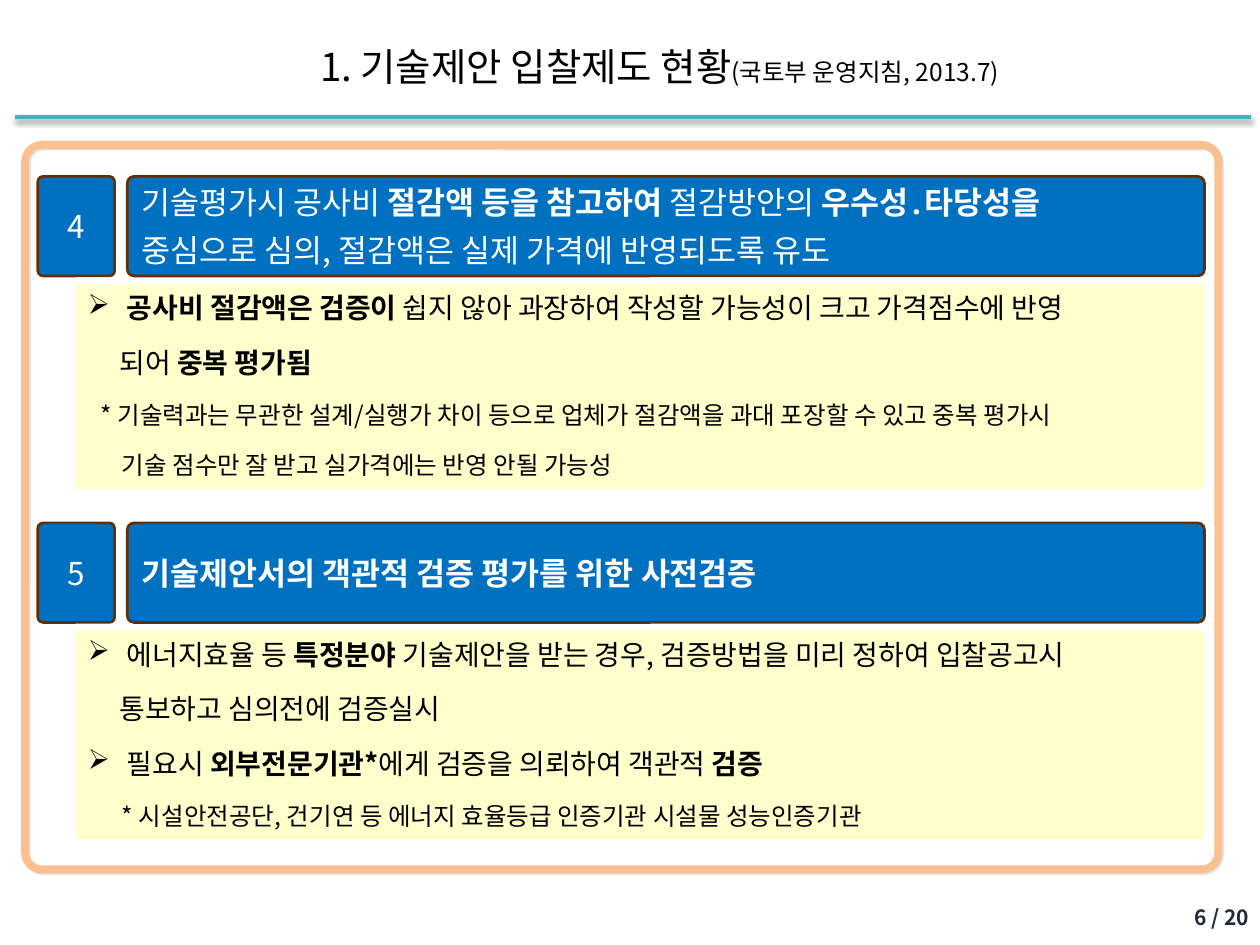
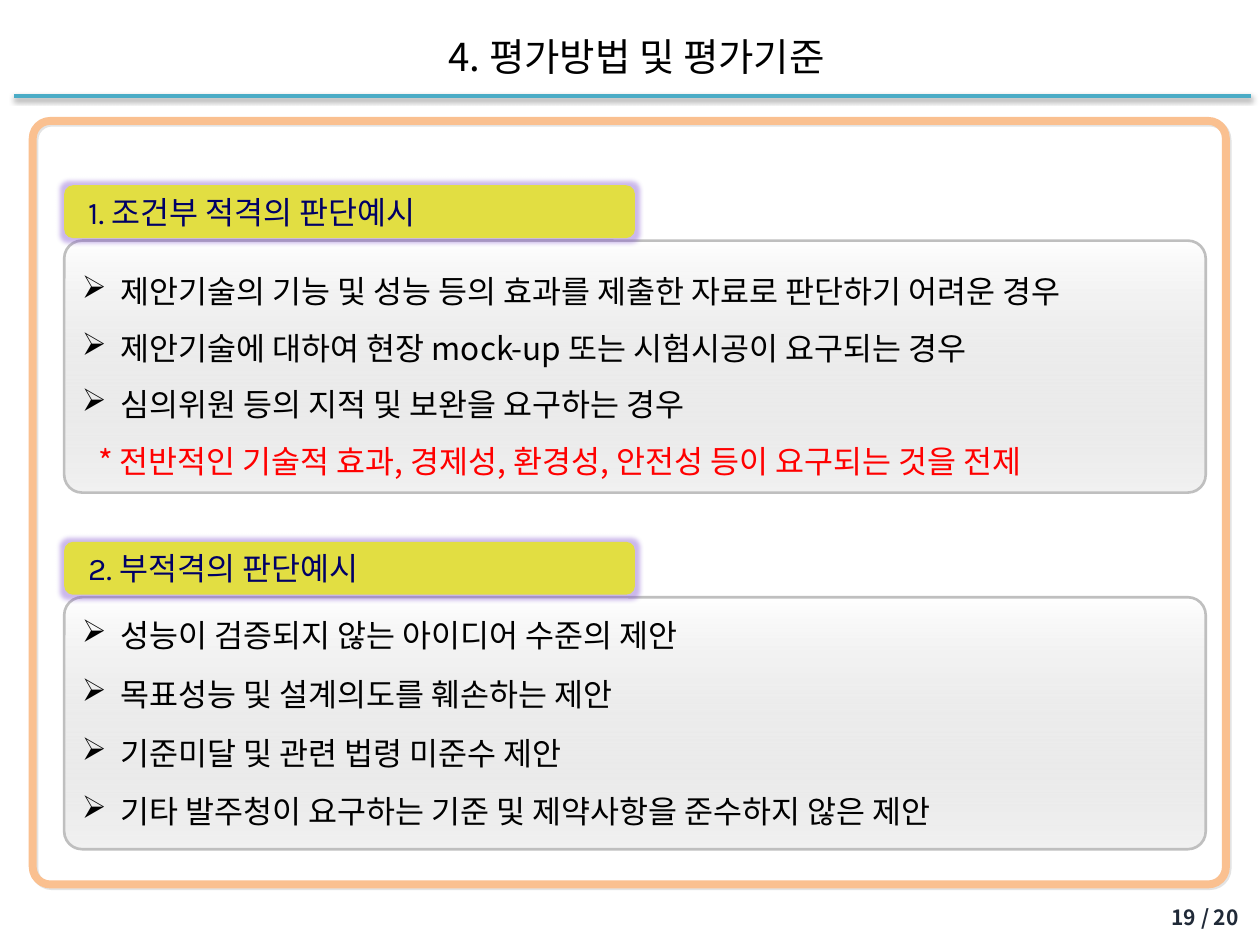
from lxml.etree import SubElement
from pptx import Presentation
from pptx.dml.color import RGBColor
from pptx.enum.shapes import MSO_CONNECTOR, MSO_SHAPE
from pptx.enum.text import MSO_ANCHOR, MSO_AUTO_SIZE, PP_ALIGN
from pptx.oxml.ns import qn
from pptx.util import Inches, Pt

# ---- Content: |...| marks emphasis ----
EVALUATION = {
    "title": "1. 기술제안 입찰제도 현황|(국토부 운영지침, 2013.7)|",
    "title_box": (2.44, 0.29, 6.5, 0.47),
    "rule": (0.12, 0.93, 9.93),
    "frame": (0.2, 1.15, 9.47, 5.75),
    "page": ("6 / 20", 9.1),
}
EVALUATION_TOPICS = [
    {"number": "4", "top": 1.4, "detail_height": 1.62,
     "heading": [("기술평가시 공사비 |절감액 등을 참고하여 |절감방안의 |우수성․타당성을|", "plain"),
                 ("중심으로 심의, 절감액은 실제 가격에 반영되도록 유도", "plain")],
     "details": [("|공사비 절감액은 검증이 |쉽지 않아 과장하여 작성할 가능성이 크고 가격점수에 반영", "bullet"),
                 ("되어 |중복 평가됨|", "continued"),
                 ("* 기술력과는 무관한 설계/실행가 차이 등으로 업체가 절감액을 과대 포장할 수 있고 중복 평가시", "note"),
                 ("기술 점수만 잘 받고 실가격에는 반영 안될 가능성", "deep note")]},
    {"number": "5", "top": 4.15, "detail_height": 1.65,
     "heading": [("|기술제안서의 객관적 검증 평가를 위한 사전검증|", "plain")],
     "details": [("에너지효율 등 |특정분야| 기술제안을 받는 경우, 검증방법을 미리 정하여 입찰공고시", "bullet"),
                 ("통보하고 심의전에 검증실시", "continued"),
                 ("필요시 |외부전문기관*|에게 검증을 의뢰하여 객관적 |검증|", "bullet"),
                 ("* 시설안전공단, 건기연 등 에너지 효율등급 인증기관 시설물 성능인증기관", "deep note")]},
]
CRITERIA = {
    "title": "4. 평가방법 및 평가기준",
    "title_box": (3.46, 0.21, 3.74, 0.47),
    "rule": (0.11, 0.76, 9.93),
    "frame": (0.26, 0.96, 9.47, 6.06),
    "page": ("19 / 20", 9.02),
}
CRITERIA_EXAMPLES = [
    {"heading": "1. 조건부 적격의 판단예시", "top": 1.47, "leading": 1.8, "before": 0,
     "cases": [("제안기술의 기능 및 성능 등의 효과를 제출한 자료로 판단하기 어려운 경우", "bullet"),
               ("제안기술에 대하여 현장 mock-up 또는 시험시공이 요구되는 경우", "bullet"),
               ("심의위원 등의 지적 및 보완을 요구하는 경우", "bullet"),
               ("* 전반적인 기술적 효과, 경제성, 환경성, 안전성 등이 요구되는 것을 전제", "warning")]},
    {"heading": "2. 부적격의 판단예시", "top": 4.3, "leading": 1.2, "before": 12,
     "cases": [("성능이 검증되지 않는 아이디어 수준의 제안", "bullet"),
               ("목표성능 및 설계의도를 훼손하는 제안", "bullet"),
               ("기준미달 및 관련 법령 미준수 제안", "bullet"),
               ("기타 발주청이 요구하는 기준 및 제약사항을 준수하지 않은 제안", "bullet")]},
]

# ---- Shared look ----
COLORS = {
    "black": "000000", "white": "FFFFFF", "rule": "4BACC6", "page": "202A38",
    "frame": "FAC090", "frame shadow": "DDDDDD", "bar": "0070C0", "bar line": "652E01",
    "detail": "FFFFCC", "panel line": "BFBFBF", "tab": "E2DE42", "tab text": "000066",
    "glow": "7F4FCF", "warning": "FF0000",
}
PANEL_STOPS = [(0, "FFFFFF", 100), (54, "D9D9D9", 50), (100, "F2F2F2", 100)]
FONT = "Noto Sans CJK KR"
# Paragraph kinds: left margin, first-line indent, and format overrides
KINDS = {
    "plain": {"margin": 0},
    "bullet": {"margin": 0.31, "hang": -0.31, "bullet": "➢"},
    "continued": {"margin": 0.25},
    "note": {"margin": 0.1, "size": 14},
    "deep note": {"margin": 0.27, "size": 14},
    "warning": {"margin": 0.13, "color": "warning"},
    "tab": {"margin": 0.06},
}


def rgb(name):
    return RGBColor.from_string(COLORS[name])


def write_text(shape, paragraphs, size=18, color="black", font=FONT, bold=False,
               accent_size=None, align=PP_ALIGN.LEFT, anchor=MSO_ANCHOR.MIDDLE,
               before=0, leading=1.2, insets=(0.1, 0.05)):
    """Write (text, kind) paragraphs; accents are bold, or resized by accent_size."""
    frame = shape.text_frame
    frame.word_wrap = True
    frame.auto_size = MSO_AUTO_SIZE.NONE
    frame.vertical_anchor = anchor
    frame.margin_left = frame.margin_right = Inches(insets[0])
    frame.margin_top = frame.margin_bottom = Inches(insets[1])
    for index, (text, kind) in enumerate(paragraphs):
        style = KINDS[kind]
        text_size = style.get("size", size)
        paragraph = frame.add_paragraph() if index else frame.paragraphs[0]
        properties = paragraph._p.get_or_add_pPr()
        properties.set("marL", str(Inches(style["margin"])))
        properties.set("indent", str(Inches(style.get("hang", 0))))
        if "bullet" in style:
            SubElement(properties, qn("a:buChar"), char=style["bullet"])
        paragraph.alignment = align
        paragraph.line_spacing = Pt(text_size * leading)
        paragraph.space_before = Pt(before if index else 0)
        for part, piece in enumerate(text.split("|")):
            if not piece:
                continue
            accent = part % 2 == 1
            run = paragraph.add_run()
            run.text = piece
            run.font.name = font
            run.font.size = Pt(accent_size if accent and accent_size else text_size)
            run.font.bold = bold or (accent and not accent_size)
            run.font.color.rgb = rgb(style.get("color", color))
            SubElement(run._r.get_or_add_rPr(), qn("a:ea"), typeface=FONT)


def add_color(parent, value, alpha):
    color = SubElement(parent, qn("a:srgbClr"), val=value)
    SubElement(color, qn("a:alpha"), val=str(alpha * 1000))


def add_effect(shape, kind, color, alpha, **lengths):
    properties = shape._element.spPr
    effects = properties.find(qn("a:effectLst"))
    if effects is None:
        effects = SubElement(properties, qn("a:effectLst"))
    attributes = {name: str(int(value)) for name, value in lengths.items()}
    add_color(SubElement(effects, qn("a:" + kind), attributes), COLORS[color], alpha)


def add_box(slide, box, fill=None, line=None, width=1.5, corner=None):
    preset = MSO_SHAPE.RECTANGLE if corner is None else MSO_SHAPE.ROUNDED_RECTANGLE
    shape = slide.shapes.add_shape(preset, *map(Inches, box))
    if corner is not None:
        shape.adjustments[0] = corner
    if fill:
        shape.fill.solid()
        shape.fill.fore_color.rgb = rgb(fill)
    else:
        shape.fill.background()
    if line:
        shape.line.color.rgb = rgb(line)
        shape.line.width = Pt(width)
    else:
        shape.line.fill.background()
    shape.shadow.inherit = False
    return shape


def shade_panel(shape):
    shape.fill.gradient()
    shape.fill.gradient_angle = 270
    stops = shape._element.spPr.find(qn("a:gradFill")).find(qn("a:gsLst"))
    for stop in list(stops):
        stops.remove(stop)
    for position, color, alpha in PANEL_STOPS:
        add_color(SubElement(stops, qn("a:gs"), pos=str(position * 1000)), color, alpha)


def start_slide(presentation, content):
    """Add a slide with the title, rule, frame and page number."""
    slide = presentation.slides.add_slide(presentation.slide_layouts[5])
    title = slide.shapes.title
    title.left, title.top, title.width, title.height = map(Inches, content["title_box"])
    write_text(title, [(content["title"], "plain")], size=22, accent_size=14)

    left, top, right = content["rule"]
    rule = slide.shapes.add_connector(
        MSO_CONNECTOR.STRAIGHT, *map(Inches, (left, top, right, top)))
    rule.line.color.rgb = rgb("rule")
    rule.line.width = Pt(2)
    add_effect(rule, "outerShdw", "black", 38, blurRad=Pt(3.1), dist=Pt(1.6), dir=90 * 60000)

    frame = add_box(slide, content["frame"], line="frame", width=4.5, corner=0.023)
    add_effect(frame, "outerShdw", "frame shadow", 80, blurRad=0, dist=Pt(1.4), dir=45 * 60000)

    page, left = content["page"]
    number = slide.shapes.add_textbox(*map(Inches, (left, 7.14, 0.91, 0.27)))
    write_text(number, [(page, "plain")], size=12, color="page", bold=True,
               align=PP_ALIGN.RIGHT)
    return slide


def build_evaluation(presentation):
    slide = start_slide(presentation, EVALUATION)
    for topic in EVALUATION_TOPICS:
        top = topic["top"]
        # Numbered bar
        cells = [(0.3, 0.61, [(topic["number"], "plain")], PP_ALIGN.CENTER),
                 (1.01, 8.55, topic["heading"], PP_ALIGN.LEFT)]
        for left, width, text, align in cells:
            bar = add_box(slide, (left, top, width, 0.79), "bar", "bar line", corner=0.068)
            write_text(bar, text, color="white", align=align, before=6)
        # Details under the bar
        detail = add_box(slide, (0.6, top + 0.86, 8.96, topic["detail_height"]), "detail")
        write_text(detail, topic["details"], size=16, anchor=MSO_ANCHOR.TOP, before=12)


def build_criteria(presentation):
    slide = start_slide(presentation, CRITERIA)
    for example in CRITERIA_EXAMPLES:
        top = example["top"]
        # Shaded panel with the cases
        panel = add_box(slide, (0.51, top + 0.44, 9.06, 2), line="panel line", corner=0.071)
        shade_panel(panel)
        write_text(panel, example["cases"], before=example["before"],
                   leading=example["leading"])
        # Glowing heading tab
        tab = add_box(slide, (0.51, top, 4.53, 0.42), "tab", corner=0.167)
        add_effect(tab, "glow", "glow", 40, rad=Pt(5))
        write_text(tab, [(example["heading"], "tab")], color="tab text", font="Karla",
                   insets=(0.11, 0.06))


def main():
    presentation = Presentation()
    presentation.slide_width = Inches(10)
    presentation.slide_height = Inches(7.5)
    build_evaluation(presentation)
    build_criteria(presentation)
    presentation.save("out.pptx")


if __name__ == "__main__":
    main()
